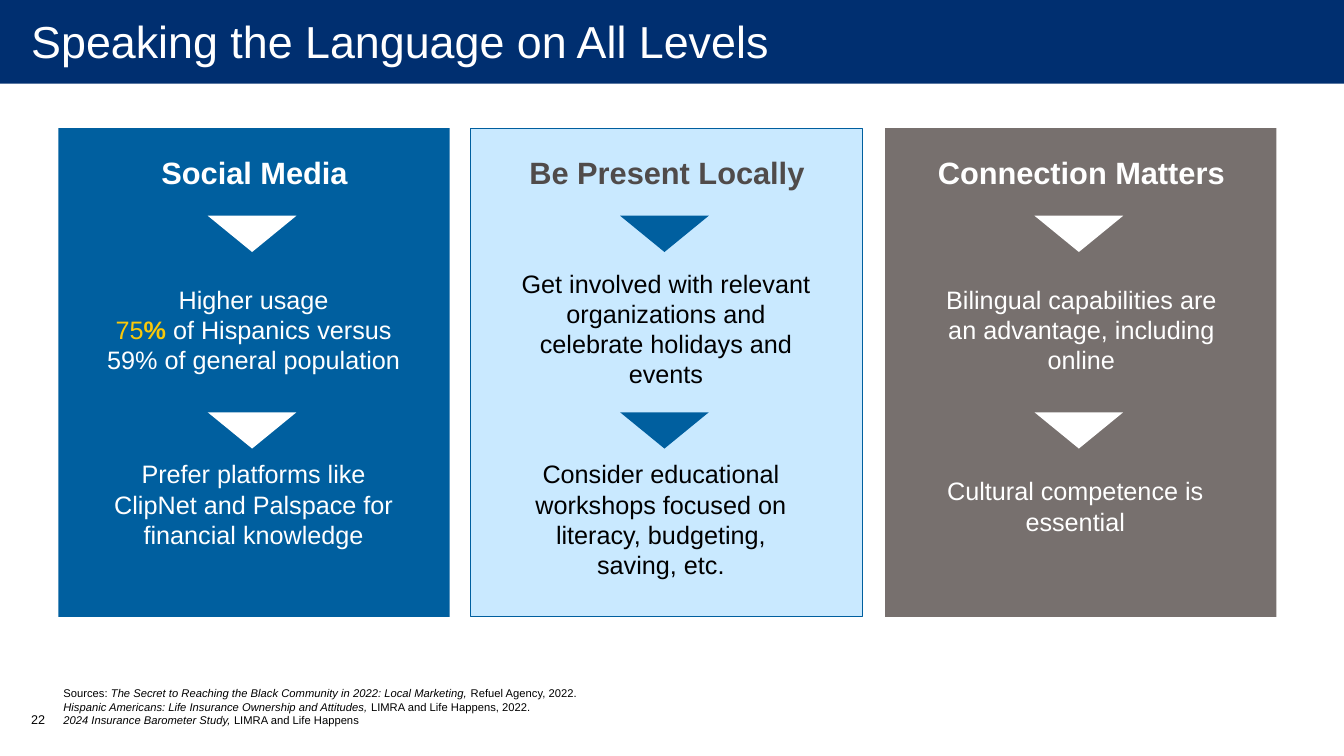
from dataclasses import dataclass

import pptx
import pptx.dml.color
import pptx.enum.shapes
import pptx.enum.text
import pptx.util
from pptx.util import Inches

SHAPES = pptx.enum.shapes.MSO_SHAPE
ANCHOR = pptx.enum.text.MSO_ANCHOR
ALIGN = pptx.enum.text.PP_ALIGN


@dataclass(frozen=True)
class Theme:
    """Colours, font and type sizes of the slide."""
    font: str = "Arial"
    navy: str = "002F70"
    blue: str = "005F9F"
    pale: str = "C9E9FF"
    grey: str = "77706E"
    dark: str = "504B4A"
    gold: str = "FAC809"
    white: str = "FFFFFF"
    black: str = "000000"
    title: int = 32
    heading: int = 22
    body: int = 18
    number: int = 9
    source: int = 8


THEME = Theme()


@dataclass(frozen=True)
class Message:
    """One centred statement, placed relative to its card."""
    offset: float
    top: float
    width: float
    height: float
    runs: list


@dataclass(frozen=True)
class Card:
    """One column with its heading, colours and statements."""
    left: float
    heading: str
    fill: str
    heading_color: str
    text_color: str
    arrow_color: str
    messages: list
    outline: str = ""


def rgb(value):
    """Turn a hex string into a colour."""
    return pptx.dml.color.RGBColor.from_string(value)


def add_block(slide, kind, box, fill, outline="", rotation=0):
    """Add a flat preset shape."""
    block = slide.shapes.add_shape(kind, *map(Inches, box))
    block.shadow.inherit = False
    block.rotation = rotation
    block.fill.solid()
    block.fill.fore_color.rgb = rgb(fill)
    if outline:
        block.line.color.rgb = rgb(outline)
        block.line.width = pptx.util.Pt(0.75)
    else:
        block.line.fill.background()


def add_text(slide, box, paragraphs, size, color, align=ALIGN.LEFT,
             anchor=ANCHOR.TOP, insets=(0.1, 0.05, 0.1, 0.05)):
    """Add a text box from paragraphs of (text, style) runs."""
    frame = slide.shapes.add_textbox(*map(Inches, box)).text_frame
    frame.word_wrap = True
    frame.vertical_anchor = anchor
    (frame.margin_left, frame.margin_top,
     frame.margin_right, frame.margin_bottom) = map(Inches, insets)
    for index, runs in enumerate(paragraphs):
        paragraph = frame.add_paragraph() if index else frame.paragraphs[0]
        paragraph.alignment = align
        for text, style in runs:
            for part, line in enumerate(text.split("\n")):
                if part:
                    paragraph.add_line_break()
                if line:
                    run = paragraph.add_run()
                    run.text = line
                    run.font.name = THEME.font
                    run.font.size = pptx.util.Pt(size)
                    run.font.bold = style.get("bold", False)
                    run.font.italic = style.get("italic", False)
                    run.font.color.rgb = rgb(style.get("color", color))


def add_card(slide, card):
    """Add a column: panel, heading, arrows and statements."""
    add_block(slide, SHAPES.RECTANGLE, (card.left, 1.27, 3.88, 4.85),
              card.fill, card.outline)
    add_text(slide, (card.left - 0.03, 1.48, 3.95, 0.47),
             [[(card.heading, {"bold": True})]],
             THEME.heading, card.heading_color, ALIGN.CENTER)
    for arrow_top, message in zip((2.14, 4.09), card.messages):
        add_block(slide, SHAPES.ISOSCELES_TRIANGLE,
                  (card.left + 1.48, arrow_top, 0.88, 0.36),
                  card.arrow_color, rotation=180)
        add_text(slide, (card.left + message.offset, message.top,
                         message.width, message.height),
                 [message.runs], THEME.body, card.text_color, ALIGN.CENTER)


def main():
    """Build the slide and save it."""
    deck = pptx.Presentation()
    deck.slide_width, deck.slide_height = Inches(13.33), Inches(7.5)
    slide = deck.slides.add_slide(deck.slide_layouts[6])

    add_block(slide, SHAPES.RECTANGLE, (0, 0, 13.33, 0.83), THEME.navy)
    add_text(slide, (0.01, -0.08, 13.32, 0.97),
             [[("Speaking the Language on All Levels", {})]],
             THEME.title, THEME.white, anchor=ANCHOR.MIDDLE,
             insets=(0.3, 0, 0.2, 0))

    cards = [
        Card(0.58, "Social Media", THEME.blue, THEME.white, THEME.white, THEME.white, [
            Message(0.34, 2.77, 3.19, 1.01, [
                ("Higher usage\n", {}),
                ("75", {"color": THEME.gold}),
                ("% ", {"color": THEME.gold, "bold": True}),
                ("of Hispanics versus 59% of general population", {})]),
            Message(0.11, 4.5, 3.65, 1.31, [
                ("Prefer platforms like\n"
                 "ClipNet and Palspace for financial knowledge", {})]),
        ]),
        Card(4.67, "Be Present Locally", THEME.pale, THEME.dark, THEME.black, THEME.blue, [
            Message(0.34, 2.61, 3.19, 1.31, [
                ("Get involved with relevant organizations and "
                 "celebrate holidays and events", {})]),
            Message(0.37, 4.5, 3.03, 1.31, [
                ("Consider educational workshops focused on "
                 "literacy, budgeting, saving, etc.", {})]),
        ], outline=THEME.blue),
        Card(8.78, "Connection Matters", THEME.grey, THEME.white, THEME.white, THEME.white, [
            Message(0.35, 2.77, 3.19, 1.01, [
                ("Bilingual capabilities are an advantage, including online", {})]),
            Message(0.37, 4.67, 3.03, 0.71, [
                ("Cultural competence is essential", {})]),
        ]),
    ]
    for card in cards:
        add_card(slide, card)

    add_text(slide, (0.21, 7.01, 0.49, 0.4), [[("22", {})]],
             THEME.number, THEME.black)
    cited = {"italic": True}
    add_text(slide, (0.53, 6.87, 5.85, 0.39), [
        [("Sources: ", {}),
         ("The Secret to Reaching the Black Community in 2022: Local Marketing,", cited),
         (" Refuel Agency, 2022.", {})],
        [("Hispanic Americans: Life Insurance Ownership and Attitudes, ", cited),
         ("LIMRA and Life Happens, 2022.", {})],
        [("2024 Insurance Barometer Study, ", cited),
         ("LIMRA and Life Happens", {})],
    ], THEME.source, THEME.black, anchor=ANCHOR.BOTTOM)

    deck.save("out.pptx")


if __name__ == "__main__":
    main()
